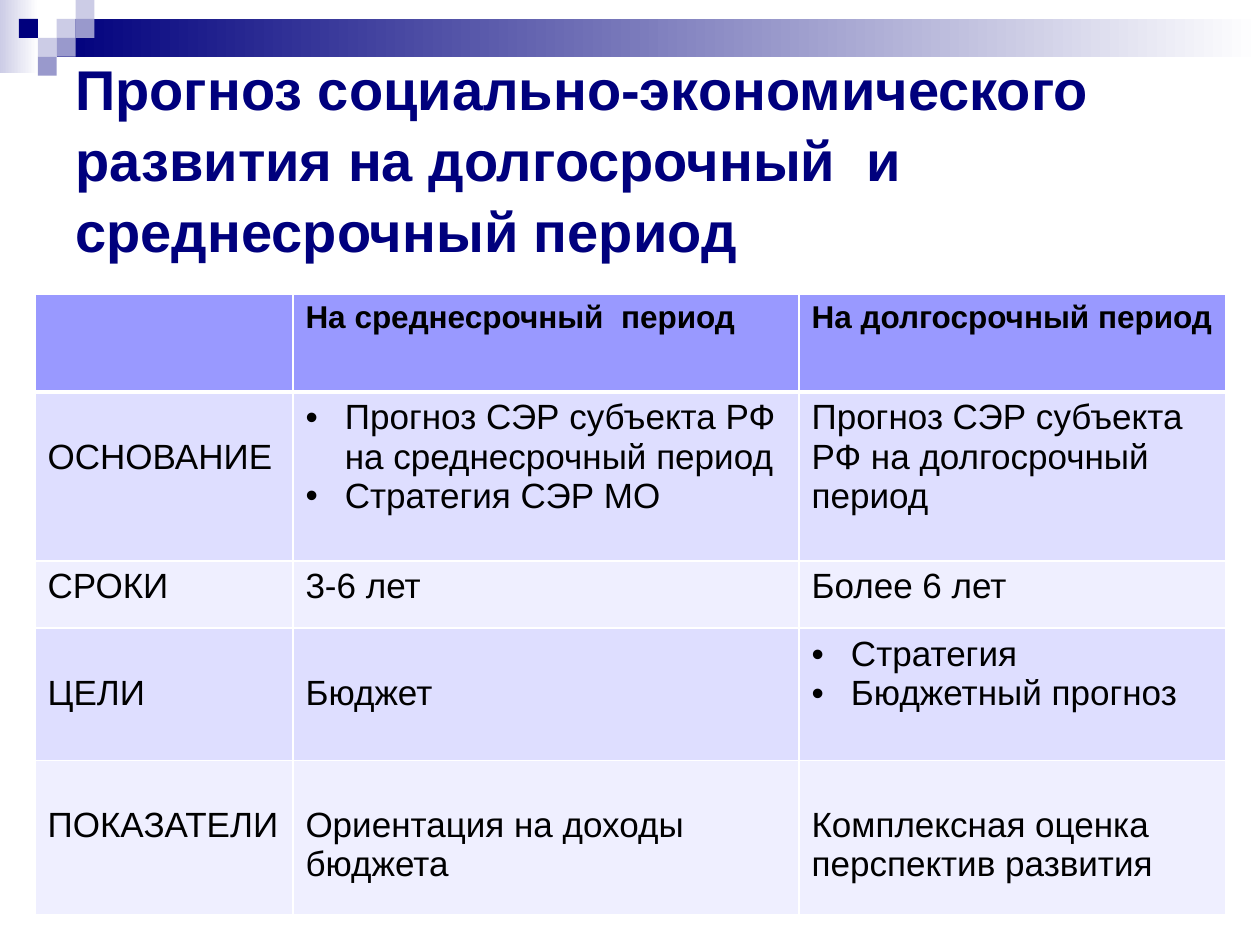
from typing import NamedTuple

from lxml.etree import SubElement
from pptx import Presentation
from pptx.dml.color import RGBColor as RGB
from pptx.enum.shapes import MSO_SHAPE as Shape
from pptx.enum.text import MSO_ANCHOR as Anchor
from pptx.oxml.ns import qn
from pptx.util import Pt

FONT = "Arial"
COLORS = {
    "navy": "00007D", "violet": "9999CC", "lilac": "CCCCE6", "white": "FFFFFF",
    "black": "000000", "header": "9999FF", "band_dark": "DEDEFF", "band_light": "EFEFFF",
}
UNIT = 10.8  # side of one decorative square
TITLE = "Прогноз социально-экономического развития на долгосрочный  и среднесрочный период"
COLUMN_WIDTHS = (147.4, 289.2, 244)
INDENT = 22.5
CELL_TOP, LOWERED_TOP = 3.6, 26


class Square(NamedTuple):
    col: int
    row: int
    color: str


class Cell(NamedTuple):
    lines: tuple[str, ...] = ()
    lowered: bool = False
    bullets: bool = False


class Row(NamedTuple):
    height: float
    fill: str
    cells: tuple[Cell, ...]


SQUARES = (
    Square(3, 1, "lilac"), Square(4, 0, "lilac"), Square(4, 1, "violet"),
    Square(2, 2, "lilac"), Square(1, 1, "navy"), Square(3, 2, "violet"),
    Square(2, 3, "violet"),
)
ROWS = (
    Row(56, "header", (
        Cell(), Cell(("На среднесрочный  период",)), Cell(("На долгосрочный период",)))),
    Row(96.5, "band_dark", (
        Cell(("ОСНОВАНИЕ",), lowered=True),
        Cell(("Прогноз СЭР субъекта РФ на среднесрочный период", "Стратегия СЭР МО"),
             bullets=True),
        Cell(("Прогноз СЭР субъекта РФ на долгосрочный период",)))),
    Row(38.5, "band_light", (
        Cell(("СРОКИ",)), Cell(("3-6 лет",)), Cell(("Более 6 лет",)))),
    Row(75.5, "band_dark", (
        Cell(("ЦЕЛИ",), lowered=True), Cell(("Бюджет",), lowered=True),
        Cell(("Стратегия", "Бюджетный прогноз"), bullets=True))),
    Row(88, "band_light", (
        Cell(("ПОКАЗАТЕЛИ",), lowered=True),
        Cell(("Ориентация на доходы бюджета",), lowered=True),
        Cell(("Комплексная оценка перспектив развития",), lowered=True))),
)


def rgb(name: str) -> RGB:
    return RGB.from_string(COLORS[name])


def add_rect(s, left: float, top: float, width: float, height: float,
             color: str, fade: bool = False) -> None:
    """Draw a borderless rectangle, solid or fading to white on the right."""
    sp = s.shapes.add_shape(Shape.RECTANGLE, Pt(left), Pt(top), Pt(width), Pt(height))
    sp.shadow.inherit = False
    sp.line.fill.background()
    if fade:
        sp.fill.gradient()
        sp.fill.gradient_angle = 0
        for position, (stop, name) in enumerate(zip(sp.fill.gradient_stops, (color, "white"))):
            stop.color.rgb = rgb(name)
            stop.position = position
    else:
        sp.fill.solid()
        sp.fill.fore_color.rgb = rgb(color)


def add_run(p, text: str, size: float, color: str, bold: bool = False) -> None:
    r = p.add_run()
    r.text = text
    r.font.name = FONT
    r.font.size = Pt(size)
    r.font.bold = bold
    r.font.color.rgb = rgb(color)


def add_bullet(p) -> None:
    pPr = p._p.get_or_add_pPr()
    pPr.set("marL", str(Pt(INDENT)))
    pPr.set("indent", str(-Pt(INDENT)))
    SubElement(pPr, qn("a:buFont"), typeface=FONT)
    SubElement(pPr, qn("a:buChar"), char="•")


def set_borders(cell, top: float, bottom: float) -> None:
    tcPr = cell._tc.get_or_add_tcPr()
    widths = {"a:lnL": 1, "a:lnR": 1, "a:lnT": top, "a:lnB": bottom}
    for i, (tag, width) in enumerate(widths.items()):
        ln = tcPr.makeelement(qn(tag), {"w": str(Pt(width))})
        fill = SubElement(ln, qn("a:solidFill"))
        SubElement(fill, qn("a:srgbClr"), val=COLORS["white"])
        tcPr.insert(i, ln)  # borders come before the cell fill


def fill_cell(cell, content: Cell, fill: str, header: bool) -> None:
    cell.fill.solid()
    cell.fill.fore_color.rgb = rgb(fill)
    cell.vertical_anchor = Anchor.TOP
    cell.margin_top = Pt(LOWERED_TOP if content.lowered else CELL_TOP)
    tf = cell.text_frame
    for i, line in enumerate(content.lines):
        p = tf.add_paragraph() if i else tf.paragraphs[0]
        if content.bullets:
            add_bullet(p)
        add_run(p, line, 18 if header else 20, "black", bold=header)


def add_title(s) -> None:
    tf = s.shapes.add_textbox(Pt(36), Pt(36), Pt(648), Pt(108)).text_frame
    tf.word_wrap = True
    tf.vertical_anchor = Anchor.MIDDLE
    p = tf.paragraphs[0]
    p.line_spacing = 1.05
    add_run(p, TITLE, 32, "navy", bold=True)


def add_comparison(s) -> None:
    height = sum(row.height for row in ROWS)
    frame = s.shapes.add_table(len(ROWS), len(COLUMN_WIDTHS), Pt(20), Pt(168),
                               Pt(sum(COLUMN_WIDTHS)), Pt(height))
    table = frame.table
    for column, width in zip(table.columns, COLUMN_WIDTHS):
        column.width = Pt(width)
    for i, row in enumerate(ROWS):
        table.rows[i].height = Pt(row.height)
        for j, content in enumerate(row.cells):
            cell = table.cell(i, j)
            fill_cell(cell, content, row.fill, header=i == 0)
            set_borders(cell, top=3 if i == 1 else 1, bottom=3 if i == 0 else 1)


def main() -> None:
    prs = Presentation()
    prs.slide_width, prs.slide_height = Pt(720), Pt(540)
    s = prs.slides.add_slide(prs.slide_layouts[6])
    add_rect(s, 0, 0, 22, 42, "lilac", fade=True)
    add_rect(s, 3 * UNIT, UNIT, 720 - 3 * UNIT, 2 * UNIT, "navy", fade=True)
    for square in SQUARES:
        add_rect(s, square.col * UNIT, square.row * UNIT, UNIT, UNIT, square.color)
    add_title(s)
    add_comparison(s)
    prs.save("out.pptx")


if __name__ == "__main__":
    main()
